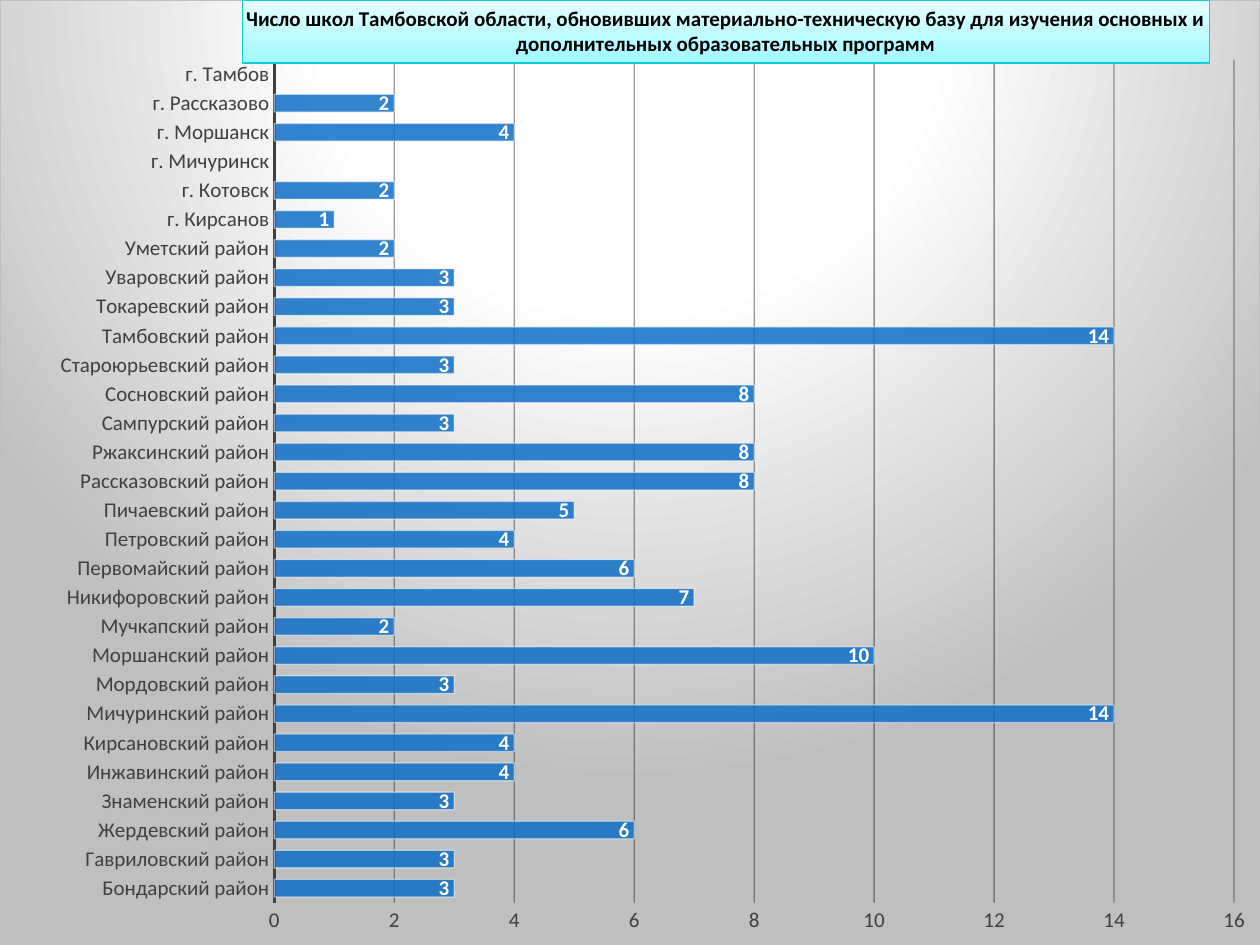
"""Bar chart of schools with renewed equipment in Tambov region."""
import dataclasses
import typing

import lxml.etree
import pptx
import pptx.chart.data
import pptx.dml.color
import pptx.enum.chart
import pptx.oxml
import pptx.oxml.ns
import pptx.util

WIDTH, HEIGHT = 10, 7.5
COLORS = {
    "slide": "F2F2F2", "bar": "0F6FC6", "white": "FFFFFF", "text": "404040",
    "black": "000000", "grid": "0D0D0D", "edge": "BFBFBF",
    "title_top": "E6FEFF", "title_bottom": "A0FAFF", "title_edge": "0BD0D9",
}
HEADING = ("Число школ Тамбовской области, обновивших материально-техническую базу "
           "для изучения основных и дополнительных образовательных программ")


@dataclasses.dataclass(frozen=True)
class Area:
    """A district or town and its number of schools."""
    name: str
    schools: typing.Optional[int]


class Stop(typing.NamedTuple):
    """A gradient stop: share in percent, colour name, opacity in percent."""
    share: int
    color: str
    alpha: int = 100


DISTRICTS = [Area(f"{name} район", schools) for name, schools in (
    ("Бондарский", 3), ("Гавриловский", 3), ("Жердевский", 6), ("Знаменский", 3),
    ("Инжавинский", 4), ("Кирсановский", 4), ("Мичуринский", 14), ("Мордовский", 3),
    ("Моршанский", 10), ("Мучкапский", 2), ("Никифоровский", 7), ("Первомайский", 6),
    ("Петровский", 4), ("Пичаевский", 5), ("Рассказовский", 8), ("Ржаксинский", 8),
    ("Сампурский", 3), ("Сосновский", 8), ("Староюрьевский", 3), ("Тамбовский", 14),
    ("Токаревский", 3), ("Уваровский", 3), ("Уметский", 2),
)]
TOWNS = [Area(f"г. {name}", schools) for name, schools in (
    ("Кирсанов", 1), ("Котовск", 2), ("Мичуринск", None), ("Моршанск", 4),
    ("Рассказово", 2), ("Тамбов", None),
)]


def rgb(name: str) -> pptx.dml.color.RGBColor:
    return pptx.dml.color.RGBColor.from_string(COLORS[name])


def apply(target: typing.Any, values: dict) -> None:
    for attribute, value in values.items():
        setattr(target, attribute, value)


def style_font(font: typing.Any, color: str, size: float = 12, bold: bool = False) -> None:
    apply(font, {"name": "Calibri", "size": pptx.util.Pt(size), "bold": bold})
    font.color.rgb = rgb(color)


def style_line(line: typing.Any, color: str, width: float = 0.75) -> None:
    line.color.rgb = rgb(color)
    line.width = pptx.util.Pt(width)


def set_alpha(paint: typing.Any, percent: int) -> None:
    for color in paint.iter(pptx.oxml.ns.qn("a:srgbClr")):
        lxml.etree.SubElement(color, pptx.oxml.ns.qn("a:alpha"), val=str(percent * 1000))


def gradient(stops: typing.Iterable[Stop], direction: str) -> str:
    colors = "".join(
        f'<a:gs pos="{stop.share * 1000}"><a:srgbClr val="{COLORS[stop.color]}">'
        f'<a:alpha val="{stop.alpha * 1000}"/></a:srgbClr></a:gs>' for stop in stops)
    return f"<a:gradFill><a:gsLst>{colors}</a:gsLst>{direction}</a:gradFill>"


def look(content: str) -> typing.Any:
    return pptx.oxml.parse_xml(
        f"<c:spPr {pptx.oxml.ns.nsdecls('c', 'a')}>{content}</c:spPr>")


def place(parent: typing.Any, index: int, **shares: float) -> None:
    """Give a chart part a manual layout in shares of the chart."""
    for old in parent.findall(pptx.oxml.ns.qn("c:layout")):
        parent.remove(old)
    layout = pptx.oxml.parse_xml(f"<c:layout {pptx.oxml.ns.nsdecls('c')}><c:manualLayout/></c:layout>")
    settings = {"layoutTarget": "inner"} if "w" in shares else {}
    settings.update(xMode="edge", yMode="edge", **shares)
    for tag, value in settings.items():
        lxml.etree.SubElement(layout[0], pptx.oxml.ns.qn(f"c:{tag}"), val=str(value))
    parent.insert(index, layout)


def fill_background(chart: typing.Any) -> None:
    glow = gradient(
        (Stop(0, "white"), Stop(39, "white"), Stop(100, "edge")),
        '<a:path path="circle"><a:fillToRect l="50000" t="-80000" r="50000" b="180000"/></a:path>')
    chart.element.chart.addnext(look(
        f'{glow}<a:ln w="9525"><a:solidFill><a:srgbClr val="{COLORS["edge"]}"/></a:solidFill></a:ln>'))


def style_title(chart: typing.Any) -> None:
    title = chart.chart_title
    title.text_frame.text = HEADING
    style_font(title.text_frame.paragraphs[0].runs[0].font, "black", bold=True)
    title.include_in_layout = False
    fill = title.format.fill
    fill.gradient()
    fill.gradient_angle = 270
    for stop, color in zip(fill.gradient_stops, ("title_top", "title_bottom")):
        stop.color.rgb = rgb(color)
    style_line(title.format.line, "title_edge")
    place(chart.element.chart.find(pptx.oxml.ns.qn("c:title")), 1, x=0.192, y=0)


def style_axes(chart: typing.Any) -> None:
    no_tick = pptx.enum.chart.XL_TICK_MARK.NONE
    for axis in (chart.category_axis, chart.value_axis):
        apply(axis, {"major_tick_mark": no_tick, "minor_tick_mark": no_tick})
        style_font(axis.tick_labels.font, "text")
    style_line(chart.category_axis.format.line, "text", 1.5)
    counts = chart.value_axis
    apply(counts, {"minimum_scale": 0, "maximum_scale": 16, "major_unit": 2,
                   "has_major_gridlines": True})
    counts.format.line.fill.background()
    fade = gradient((Stop(0, "grid", 42), Stop(100, "edge", 36)), '<a:lin ang="5400000" scaled="0"/>')
    grid = chart.element.chart.plotArea.find(".//" + pptx.oxml.ns.qn("c:majorGridlines"))
    grid.append(look(f'<a:ln w="9525">{fade}</a:ln>'))


def style_bars(chart: typing.Any) -> None:
    plot = chart.plots[0]
    apply(plot, {"gap_width": 65, "vary_by_categories": False, "has_data_labels": True})
    apply(plot.data_labels, {
        "show_value": True, "position": pptx.enum.chart.XL_LABEL_POSITION.INSIDE_END})
    style_font(plot.data_labels.font, "white", bold=True)
    bars = plot.series[0]
    bars.format.fill.solid()
    bars.format.fill.fore_color.rgb = rgb("bar")
    style_line(bars.format.line, "white")
    paint = bars._element.find(pptx.oxml.ns.qn("c:spPr"))
    set_alpha(paint.find(pptx.oxml.ns.qn("a:solidFill")), 85)
    set_alpha(paint.find(pptx.oxml.ns.qn("a:ln")), 50)


def main() -> None:
    deck = pptx.Presentation()
    apply(deck, {"slide_width": pptx.util.Inches(WIDTH), "slide_height": pptx.util.Inches(HEIGHT)})
    slide = deck.slides.add_slide(deck.slide_layouts[6])
    slide.background.fill.solid()
    slide.background.fill.fore_color.rgb = rgb("slide")

    areas = DISTRICTS + TOWNS
    data = pptx.chart.data.CategoryChartData()
    data.categories = [area.name for area in areas]
    data.add_series("Series 1", [area.schools for area in areas])
    chart = slide.shapes.add_chart(
        pptx.enum.chart.XL_CHART_TYPE.BAR_CLUSTERED, 0, 0,
        deck.slide_width, deck.slide_height, data).chart
    chart.has_legend = False
    style_font(chart.font, "black", 10)
    fill_background(chart)
    style_title(chart)
    style_axes(chart)
    style_bars(chart)
    place(chart.element.chart.plotArea, 0, x=0.2174, y=0.0625, w=0.7626, h=0.8935)
    deck.save("out.pptx")


if __name__ == "__main__":
    main()
